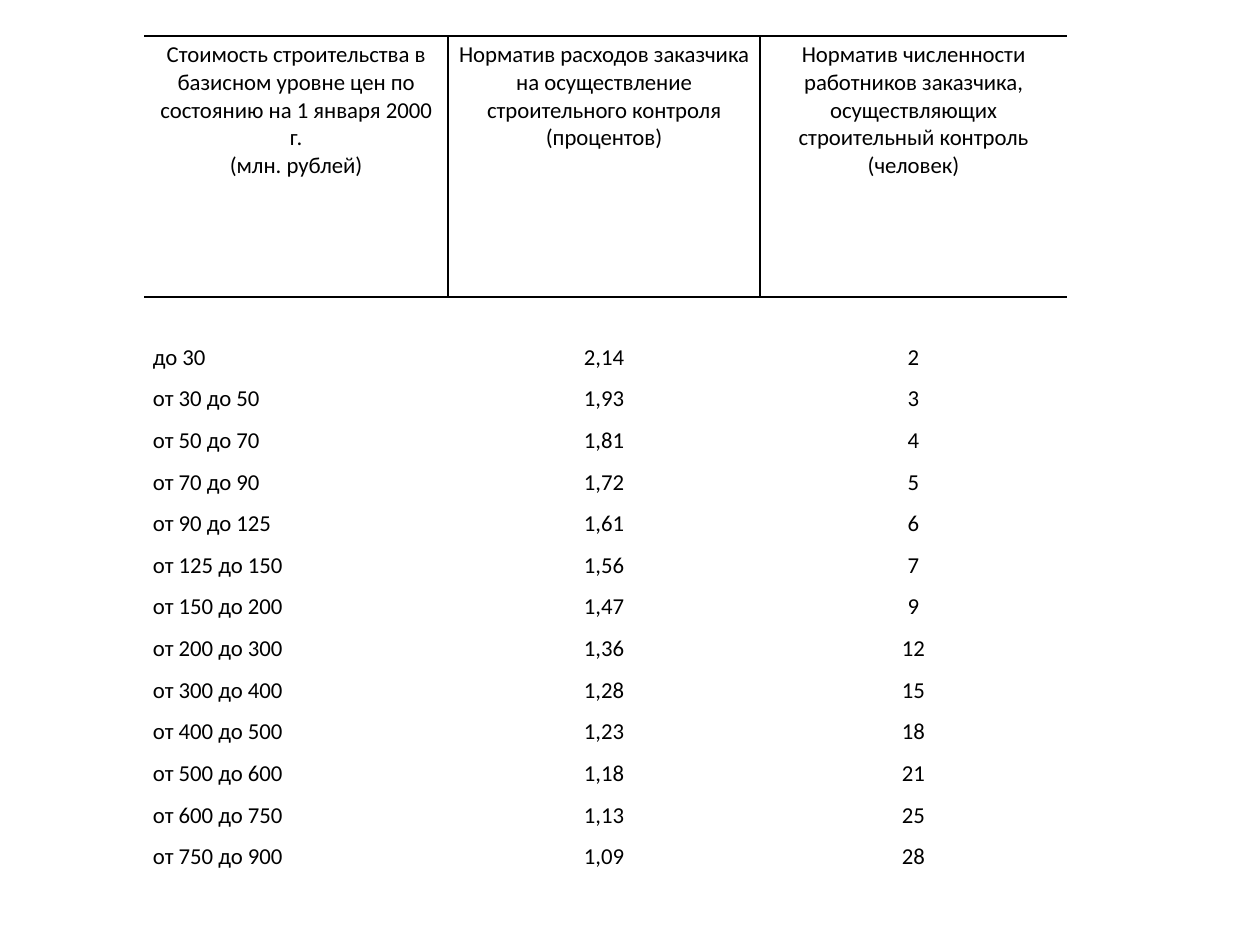
"""Builds a slide with a table of construction control cost and staffing norms."""
import lxml.etree
import pptx
import pptx.dml.color
import pptx.enum.text
import pptx.oxml.ns
import pptx.util

SCALE = 914400 // 126
ALIGN = pptx.enum.text.PP_ALIGN

HEADERS = [
    ["Стоимость строительства в базисном уровне цен по состоянию на 1 января 2000 г.",
     "(млн. рублей)"],
    ["Норматив расходов заказчика на осуществление строительного контроля",
     "(процентов)"],
    ["Норматив численности работников заказчика, осуществляющих строительный контроль",
     "(человек)"],
]
NORMS = [
    ("до 30", "2,14", "2"),
    ("от 30 до 50", "1,93", "3"),
    ("от 50 до 70", "1,81", "4"),
    ("от 70 до 90", "1,72", "5"),
    ("от 90 до 125", "1,61", "6"),
    ("от 125 до 150", "1,56", "7"),
    ("от 150 до 200", "1,47", "9"),
    ("от 200 до 300", "1,36", "12"),
    ("от 300 до 400", "1,28", "15"),
    ("от 400 до 500", "1,23", "18"),
    ("от 500 до 600", "1,18", "21"),
    ("от 600 до 750", "1,13", "25"),
    ("от 750 до 900", "1,09", "28"),
]


def emu(px):
    return pptx.util.Emu(px * SCALE)


def color(value):
    return pptx.dml.color.RGBColor.from_string(value)


def apply(target, values):
    for name, value in values.items():
        setattr(target, name, value)


def add_element(parent, tag, **attributes):
    return lxml.etree.SubElement(parent, pptx.oxml.ns.qn(tag), attributes)


class SlideBuilder:
    ink = "000000"
    line_width = pptx.util.Pt(0.75)
    font = {"name": "Calibri", "size": pptx.util.Pt(13), "bold": False}
    margins = {"margin_left": emu(9), "margin_right": emu(9),
               "margin_top": emu(5), "margin_bottom": emu(5)}

    def __init__(self, page):
        self.page = page

    def borders(self, cell, sides):
        properties = cell._tc.get_or_add_tcPr()
        for side in "LRTB":
            line = add_element(properties, f"a:ln{side}", w=str(self.line_width))
            if side in sides:
                fill = add_element(line, "a:solidFill")
                add_element(fill, "a:srgbClr", val=self.ink)
            else:
                add_element(line, "a:noFill")

    def text(self, cell, lines, align):
        frame = cell.text_frame
        for index, line in enumerate(lines):
            para = frame.add_paragraph() if index else frame.paragraphs[0]
            para.alignment = align
            if line:
                span = para.add_run()
                span.text = line
                apply(span.font, self.font)
                span.font.color.rgb = color(self.ink)
            else:
                add_element(para._p, "a:endParaRPr", sz=str(int(self.font["size"].pt * 100)))

    def table(self, left, top, widths, header_height, body_height, rows):
        body_rows = len(rows) - 1
        frame = self.page.shapes.add_table(
            len(rows), len(widths), emu(left), emu(top),
            emu(sum(widths)), emu(header_height + body_height))
        table = frame.table
        apply(table, {"first_row": False, "horz_banding": False})
        for column, width in zip(table.columns, widths):
            column.width = emu(width)
        for index, row in enumerate(table.rows):
            row.height = emu(body_height) // body_rows if index else emu(header_height)
        last = len(widths) - 1
        for r, row in enumerate(rows):
            for c, lines in enumerate(row):
                cell = table.cell(r, c)
                apply(cell, self.margins)
                if r == 0:
                    sides = "TB" + ("L" if c > 0 else "") + ("R" if c < last else "")
                else:
                    sides = "T" if r == 1 else ""
                self.borders(cell, sides)
                cell.fill.background()
                self.text(cell, lines, ALIGN.LEFT if r and c == 0 else ALIGN.CENTER)


def main():
    deck = pptx.Presentation()
    apply(deck, {"slide_width": emu(1260), "slide_height": emu(945)})
    builder = SlideBuilder(deck.slides.add_slide(deck.slide_layouts[6]))
    spacer = [[""]] * len(HEADERS)
    body = [[[value] for value in norm] for norm in NORMS]
    builder.table(144, 36, [304, 312, 307], 261, 583, [HEADERS, spacer, *body])
    deck.save("out.pptx")


if __name__ == "__main__":
    main()
